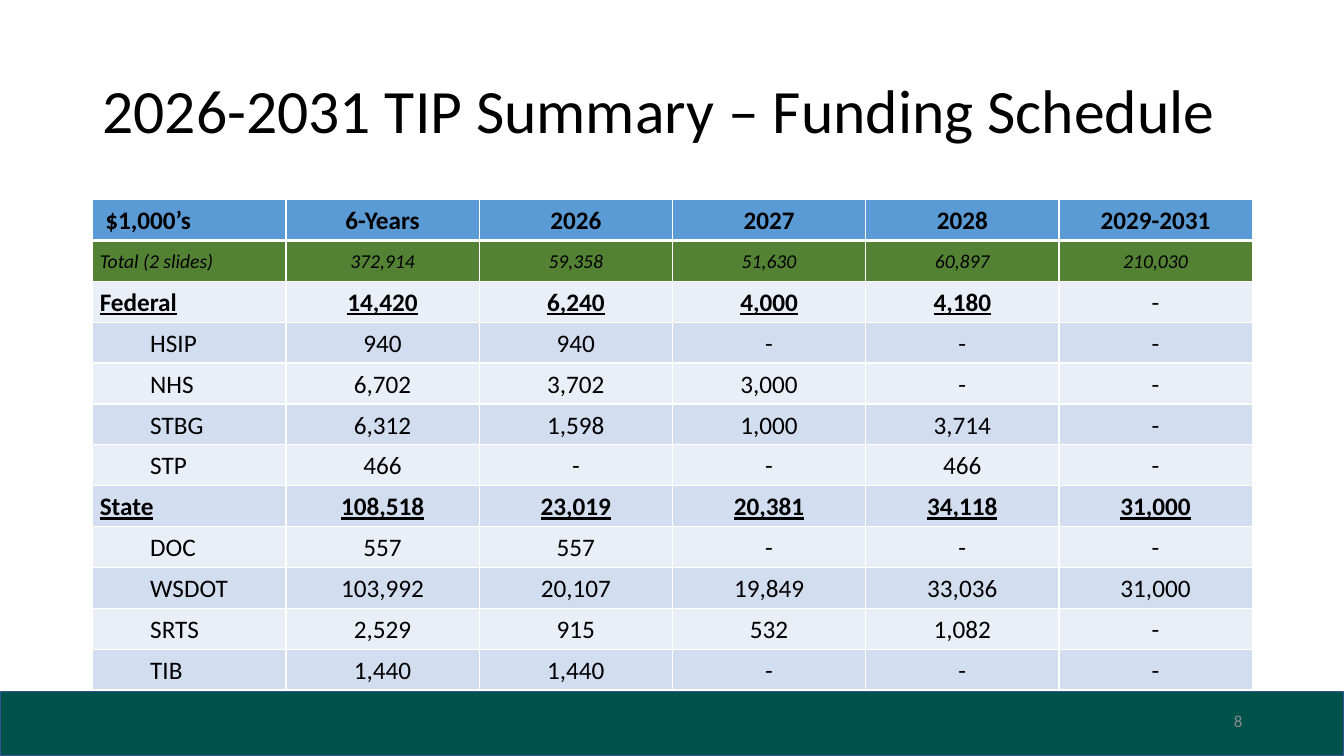
import pptx
import pptx.util
import pptx.dml.color
import pptx.enum.shapes
import pptx.enum.text
import lxml.etree

RGBColor = pptx.dml.color.RGBColor
Inches = pptx.util.Inches
Pt = pptx.util.Pt
ALIGN = pptx.enum.text.PP_ALIGN
MIDDLE = pptx.enum.text.MSO_ANCHOR.MIDDLE

BLACK = RGBColor(0x00, 0x00, 0x00)
GRAY = RGBColor(0x8C, 0x8C, 0x8C)
FOOTER_GREEN = RGBColor(0x00, 0x52, 0x4C)
FOOTER_LINE = RGBColor(0x32, 0x54, 0x91)
HEADER_BLUE = RGBColor(0x5B, 0x9B, 0xD5)
TOTAL_GREEN = RGBColor(0x54, 0x82, 0x35)
BANDS = [RGBColor(0xEA, 0xEF, 0xF7), RGBColor(0xD2, 0xDE, 0xEF)]
BORDER = RGBColor(0xFF, 0xFF, 0xFF)

WIDTH, HEIGHT = 13.33, 7.5
MARGIN = 0.92
CONTENT_WIDTH = 11.5
FOOTER_TOP = 6.86
TABLE_TOP, TABLE_HEIGHT = 1.98, 4.87

FUNDING = [
    ("header", [" $1,000’s", "6-Years", "2026", "2027", "2028", "2029-2031"]),
    ("total", ["Total (2 slides)", "372,914", "59,358", "51,630", "60,897", "210,030"]),
    ("group", ["Federal", "14,420", "6,240", "4,000", "4,180", "-"]),
    ("program", ["HSIP", "940", "940", "-", "-", "-"]),
    ("program", ["NHS", "6,702", "3,702", "3,000", "-", "-"]),
    ("program", ["STBG", "6,312", "1,598", "1,000", "3,714", "-"]),
    ("program", ["STP", "466", "-", "-", "466", "-"]),
    ("group", ["State", "108,518", "23,019", "20,381", "34,118", "31,000"]),
    ("program", ["DOC", "557", "557", "-", "-", "-"]),
    ("program", ["WSDOT", "103,992", "20,107", "19,849", "33,036", "31,000"]),
    ("program", ["SRTS", "2,529", "915", "532", "1,082", "-"]),
    ("program", ["TIB", "1,440", "1,440", "-", "-", "-"]),
]
ROW_FORMATS = {
    "header": {"size": Pt(18), "bold": True},
    "total": {"size": Pt(14), "bold": False, "italic": True},
    "group": {"size": Pt(18), "bold": True, "underline": True},
    "program": {"size": Pt(18), "bold": False},
}
ROW_FILLS = {"header": HEADER_BLUE, "total": TOTAL_GREEN}


def write(paragraph, text, color, font_format):
    """Put one Calibri run into the paragraph and apply its font values."""
    run = paragraph.add_run()
    run.text = text
    run.font.name = "Calibri"
    run.font.color.rgb = color
    for name, value in font_format.items():
        setattr(run.font, name, value)


def add_border(cell, side, points):
    """Draw one white edge of a cell; call before the cell gets its fill."""
    properties = cell._tc.get_or_add_tcPr()
    tag = pptx.oxml.ns.qn
    line = lxml.etree.SubElement(properties, tag("a:ln" + side), w=str(Pt(points)))
    fill = lxml.etree.SubElement(line, tag("a:solidFill"))
    lxml.etree.SubElement(fill, tag("a:srgbClr"), val=str(BORDER))


presentation = pptx.Presentation()
presentation.slide_width = Inches(WIDTH)
presentation.slide_height = Inches(HEIGHT)
slide = presentation.slides.add_slide(presentation.slide_layouts[6])

footer = slide.shapes.add_shape(
    pptx.enum.shapes.MSO_SHAPE.RECTANGLE,
    0, Inches(FOOTER_TOP), Inches(WIDTH), Inches(HEIGHT - FOOTER_TOP))
footer.shadow.inherit = False
footer.fill.solid()
footer.fill.fore_color.rgb = FOOTER_GREEN
footer.line.color.rgb = FOOTER_LINE
footer.line.width = Pt(1)

text_boxes = [
    ("2026-2031 TIP Summary – Funding Schedule",
     (MARGIN, 0.4, CONTENT_WIDTH, 1.45), 44, BLACK, ALIGN.LEFT, 0.9),
    ("8", (MARGIN + CONTENT_WIDTH - 2, 6.95, 2, 0.4), 12, GRAY, ALIGN.RIGHT, 1.0),
]
for text, place, size, color, alignment, spacing in text_boxes:
    frame = slide.shapes.add_textbox(*map(Inches, place)).text_frame
    frame.word_wrap = True
    frame.vertical_anchor = MIDDLE
    paragraph = frame.paragraphs[0]
    paragraph.alignment = alignment
    paragraph.line_spacing = spacing
    write(paragraph, text, color, {"size": Pt(size)})

row_count, column_count = len(FUNDING), len(FUNDING[0][1])
table = slide.shapes.add_table(
    row_count, column_count, Inches(MARGIN), Inches(TABLE_TOP),
    Inches(CONTENT_WIDTH), Inches(TABLE_HEIGHT)).table

for row, (kind, values) in enumerate(FUNDING):
    for column, text in enumerate(values):
        cell = table.cell(row, column)
        cell.vertical_anchor = MIDDLE
        cell.margin_left = cell.margin_right = Inches(0.07)
        cell.margin_top = cell.margin_bottom = 0
        for side in "LRTB":
            header_edge = (row, side) in [(0, "B"), (1, "T")]
            add_border(cell, side, 3 if header_edge else 1)
        cell.fill.solid()
        cell.fill.fore_color.rgb = ROW_FILLS.get(kind, BANDS[row % 2])

        paragraph = cell.text_frame.paragraphs[0]
        paragraph.line_spacing = 1.07
        paragraph.alignment = ALIGN.CENTER if column else ALIGN.LEFT
        if kind == "program" and column == 0:
            paragraph.level = 1
            paragraph._p.get_or_add_pPr().set("marL", str(Inches(0.5)))
        text_kind = "program" if text == "-" else kind
        write(paragraph, text, BLACK, ROW_FORMATS[text_kind])

presentation.save("out.pptx")
